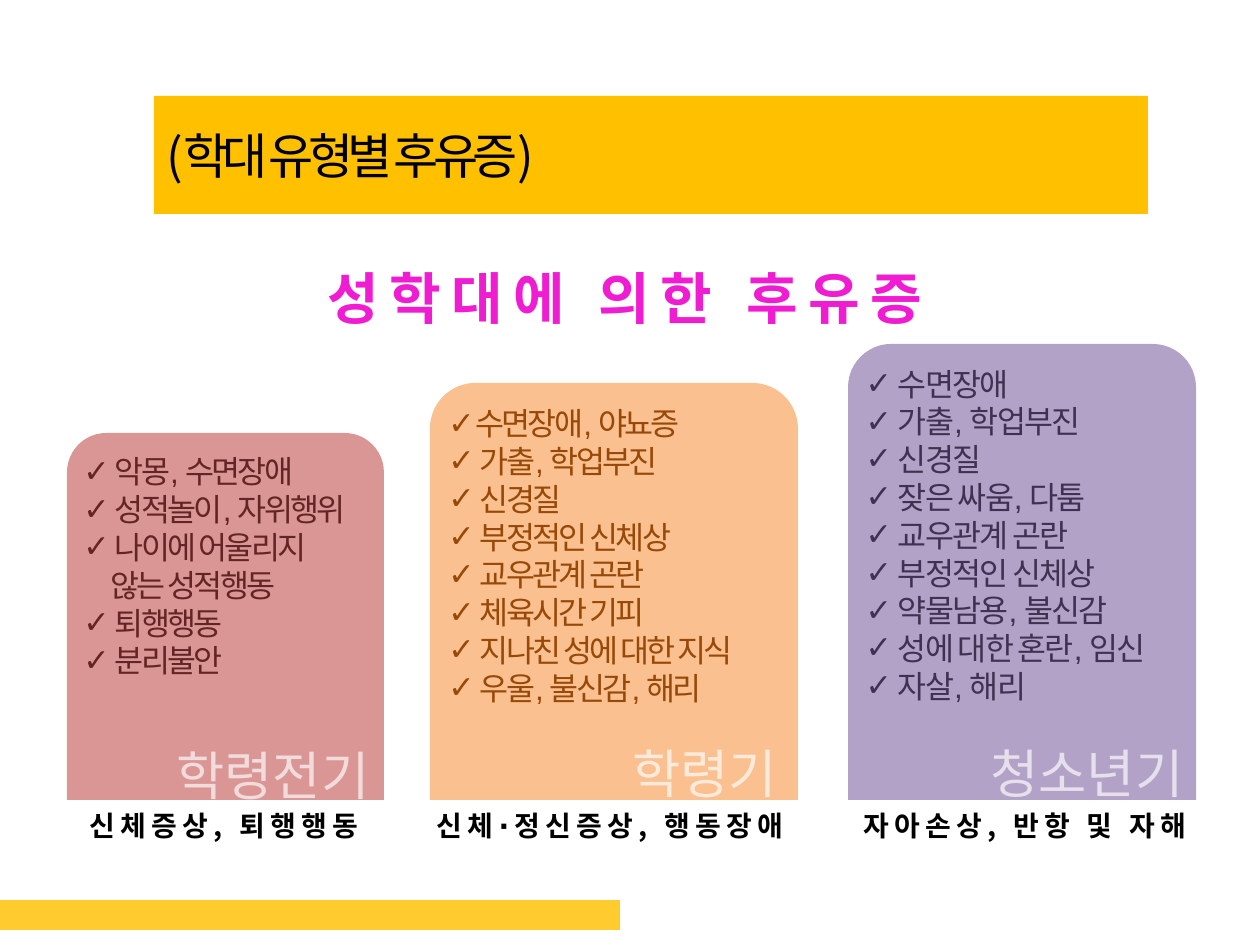
"""Build the slide on the after-effects of sexual abuse by age group."""
import pptx
import pptx.util
import pptx.dml.color
import pptx.enum.shapes
import pptx.enum.text
import pptx.oxml
import pptx.oxml.ns

EMU_PER_PX = 914400 / 126
HANGUL = "Noto Sans CJK KR"
ALIGN = pptx.enum.text.PP_ALIGN
SHAPE = pptx.enum.shapes.MSO_SHAPE
ANCHOR = pptx.enum.text.MSO_ANCHOR


def px(length):
    return pptx.util.Emu(round(length * EMU_PER_PX))


def color(value):
    return pptx.dml.color.RGBColor.from_string(value)


def add_element(parent, tag, **attributes):
    child = pptx.oxml.parse_xml(f"<a:{tag} {pptx.oxml.ns.nsdecls('a')}/>")
    for key, value in attributes.items():
        child.set(key, str(value))
    parent.append(child)


class SlideBuilder:
    def __init__(self, presentation):
        self.slide = presentation.slides.add_slide(presentation.slide_layouts[5])

    def style(self, run, size, ink, spacing=0, bold=False, latin=HANGUL):
        run.font.size = pptx.util.Pt(size)
        run.font.bold = bold
        run.font.color.rgb = color(ink)
        run.font.name = latin
        properties = run.font._element
        properties.set("spc", str(round(spacing * 100)))
        add_element(properties, "ea", typeface=HANGUL)

    def title(self, text, box, fill):
        title = self.slide.shapes.title
        title.left, title.top, title.width, title.height = map(px, box)
        title.fill.solid()
        title.fill.fore_color.rgb = color(fill)
        title.text_frame.vertical_anchor = ANCHOR.MIDDLE
        paragraph = title.text_frame.paragraphs[0]
        paragraph.alignment = ALIGN.LEFT
        run = paragraph.add_run()
        run.text = text
        self.style(run, 28, "000000", spacing=-3)

    def block(self, kind, box, fill):
        shape = self.slide.shapes.add_shape(kind, *map(px, box))
        shape.shadow.inherit = False
        shape.fill.solid()
        shape.fill.fore_color.rgb = color(fill)
        shape.line.fill.background()
        return shape

    def bar(self, box, fill, opacity):
        bar = self.block(SHAPE.RECTANGLE, box, fill)
        tint = bar._element.spPr.find(".//" + pptx.oxml.ns.qn("a:srgbClr"))
        add_element(tint, "alpha", val=opacity * 1000)

    def text(self, text, box, size, ink, align=ALIGN.LEFT, wrap=True, spacing=0, bold=False):
        frame = self.slide.shapes.add_textbox(*map(px, box)).text_frame
        frame.word_wrap = wrap
        paragraph = frame.paragraphs[0]
        paragraph.alignment = align
        paragraph.line_spacing = pptx.util.Pt(size * 1.28)
        run = paragraph.add_run()
        run.text = text
        self.style(run, size, ink, spacing, bold)

    def panel(self, box, fill, ink, symptoms, spacing):
        panel = self.block(SHAPE.ROUND_2_SAME_RECTANGLE, box, fill)
        panel.adjustments[0] = 0.124
        frame = panel.text_frame
        frame.word_wrap = True
        frame.vertical_anchor = ANCHOR.TOP
        frame.margin_left = frame.margin_right = px(5)
        frame.margin_top, frame.margin_bottom = px(8), px(6)
        for index, symptom in enumerate(symptoms):
            paragraph = frame.add_paragraph() if index else frame.paragraphs[0]
            paragraph.alignment = ALIGN.LEFT
            paragraph.line_spacing = pptx.util.Pt(21.6)
            properties = paragraph._p.get_or_add_pPr()
            properties.set("marL", str(px(27)))
            properties.set("indent", str(-px(27)))
            add_element(properties, "buFont", typeface="Arial")
            add_element(properties, "buChar", char="✓")
            for line_index, line in enumerate(symptom.split("\n")):
                if line_index:
                    paragraph.add_line_break()
                run = paragraph.add_run()
                run.text = line
                self.style(run, 18, ink, spacing, latin="Arial")


STAGES = [
    dict(
        panel=(67, 433, 317), fill="D99694", ink="632523", spacing=-1.5,
        symptoms=[" 악몽, 수면장애", " 성적놀이, 자위행위", " 나이에 어울리지\n않는 성적행동",
                  " 퇴행행동", " 분리불안"],
        stage="학령전기", stage_box=(164, 733, 237, 77), stage_ink="F2DCDB",
        caption="신체증상, 퇴행행동", caption_x=(64, 320)),
    dict(
        panel=(430, 383, 368), fill="FAC090", ink="984807", spacing=-1.5,
        symptoms=["수면장애, 야뇨증", " 가출, 학업부진", " 신경질", " 부정적인 신체상",
                  " 교우관계 곤란", " 체육시간 기피", " 지나친 성에 대한 지식",
                  " 우울, 불신감, 해리"],
        stage="학령기", stage_box=(620, 731, 184, 77), stage_ink="FDEADA",
        caption="신체∙정신증상, 행동장애", caption_x=(411, 398)),
    dict(
        panel=(848, 344, 348), fill="B3A2C7", ink="403152", spacing=-1,
        symptoms=[" 수면장애", " 가출, 학업부진", " 신경질", " 잦은 싸움, 다툼",
                  " 교우관계 곤란", " 부정적인 신체상", " 약물남용, 불신감",
                  " 성에 대한 혼란, 임신", " 자살, 해리"],
        stage="청소년기", stage_box=(978, 731, 237, 77), stage_ink="E6E0EC",
        caption="자아손상, 반항 및 자해", caption_x=(834, 382)),
]
PANEL_BOTTOM = 800


def main():
    presentation = pptx.Presentation()
    presentation.slide_width, presentation.slide_height = px(1260), px(945)
    builder = SlideBuilder(presentation)
    builder.bar((0, 900, 620, 30), "FFC000", 82)
    builder.title("(학대 유형별 후유증)", (154, 96, 994, 118), "FFC000")
    builder.text("성학대에 의한 후유증", (164, 253, 922, 81), 32, "F01CD2",
                 ALIGN.CENTER, spacing=6, bold=True)
    for stage in STAGES:
        left, top, width = stage["panel"]
        builder.panel((left, top, width, PANEL_BOTTOM - top), stage["fill"],
                      stage["ink"], stage["symptoms"], stage["spacing"])
        builder.text(stage["stage"], stage["stage_box"], 30, stage["stage_ink"])
    for stage in STAGES:
        left, width = stage["caption_x"]
        builder.text(stage["caption"], (left, PANEL_BOTTOM, width, 47), 16, "000000",
                     ALIGN.CENTER, wrap=False, spacing=3, bold=True)
    presentation.save("out.pptx")


if __name__ == "__main__":
    main()
